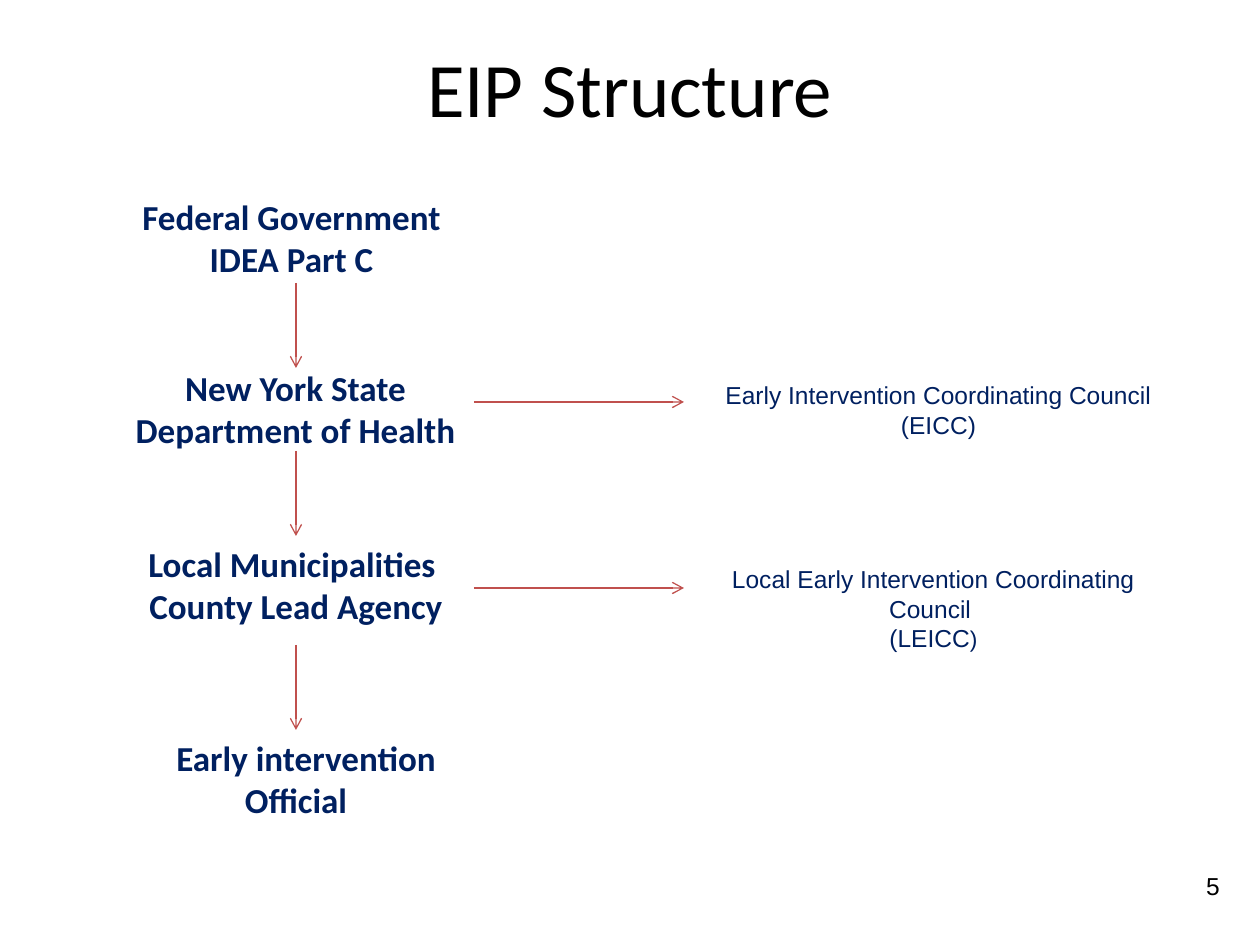
from lxml.etree import SubElement as Sub
from pptx import Presentation
from pptx.dml.color import RGBColor
from pptx.enum.shapes import MSO_CONNECTOR as Link
from pptx.enum.text import MSO_ANCHOR as Anchor, PP_ALIGN as Align
from pptx.oxml.ns import qn
from pptx.util import Emu, Pt

SCALE = 914400 / 126
TOP, RIGHT = 0, 3
NAVY, RED, BLACK = "002060", "C0504D", "000000"


def px(num):
    return Emu(round(num * SCALE))


def color(code):
    return RGBColor.from_string(code)


def write(frame, *lines, size=20, font="Calibri", tint=NAVY, bold=False,
          align=Align.CENTER, anchor=Anchor.TOP, indent=0):
    """Each line is a paragraph: a string, or a list of (string, size) runs."""
    frame.word_wrap = True
    frame.vertical_anchor = anchor
    for num, line in enumerate(lines):
        para = frame.add_paragraph() if num else frame.paragraphs[0]
        para.alignment = align
        if indent:
            para._p.get_or_add_pPr().set("indent", str(px(indent)))
        for words, points in [(line, size)] if isinstance(line, str) else line:
            run = para.add_run()
            run.text = words
            run.font.size = Pt(points)
            run.font.name = font
            run.font.bold = bold
            run.font.color.rgb = color(tint)


class Board:
    def __init__(self, wide, high):
        self.deck = Presentation()
        self.deck.slide_width, self.deck.slide_height = px(wide), px(high)
        self.slide = self.deck.slides.add_slide(self.deck.slide_layouts[5])
        self.line = RED
        self.weight = Pt(0.75)

    def title(self, words, x, y, w, h):
        head = self.slide.shapes.title
        head.left, head.top, head.width, head.height = map(px, (x, y, w, h))
        write(head.text_frame, words, size=44, tint=BLACK, anchor=Anchor.MIDDLE)

    def text(self, box, *lines, **style):
        shape = self.slide.shapes.add_textbox(*map(px, box))
        write(shape.text_frame, *lines, **style)
        return shape

    def arrow(self, x, y, dx=0, dy=0, start=None, end=None):
        link = self.slide.shapes.add_connector(
            Link.STRAIGHT, px(x), px(y), px(x + dx), px(y + dy))
        if start:
            link.begin_connect(start, RIGHT)
        if end:
            link.end_connect(end, TOP)
        link.line.color.rgb = color(self.line)
        link.line.width = self.weight
        Sub(link.line._get_or_add_ln(), qn("a:tailEnd"), type="arrow")
        Sub(link._element.spPr, qn("a:effectLst"))


def main():
    board = Board(1260, 945)
    board.title("EIP Structure", 63, 21, 1134, 132)

    # Levels of government, top to bottom
    level = {"bold": True}
    board.text((83, 189, 417, 105), "Federal Government", "IDEA Part C", **level)
    state = board.text((117, 360, 357, 84),
                       "New York State", "Department of Health", **level)
    local = board.text((91, 536, 410, 105),
                       "Local Municipalities ", "County Lead Agency", **level)
    chief = board.text((105, 730, 382, 116),
                       "Early intervention Official", indent=20, **level)

    # Advisory councils
    side = {"size": 14, "font": "Arial"}
    board.text((713, 374, 451, 69),
               "Early Intervention Coordinating Council ", "(EICC)", **side)
    board.text((708, 558, 451, 105),
               "Local Early Intervention Coordinating Council ",
               [("(LEICC", 14), (")", 13)], **side)

    # Arrows down the levels, then across to the councils
    for y, end in ((283, None), (451, local), (645, chief)):
        board.arrow(296, y, dy=85, end=end)
    for y, start in ((402, state), (588, None)):
        board.arrow(474, y, dx=210, start=start)

    # Page number
    board.text((939, 861, 293, 50), "5", tint=BLACK, align=Align.RIGHT,
               anchor=Anchor.MIDDLE, **side)
    board.deck.save("out.pptx")


if __name__ == "__main__":
    main()
